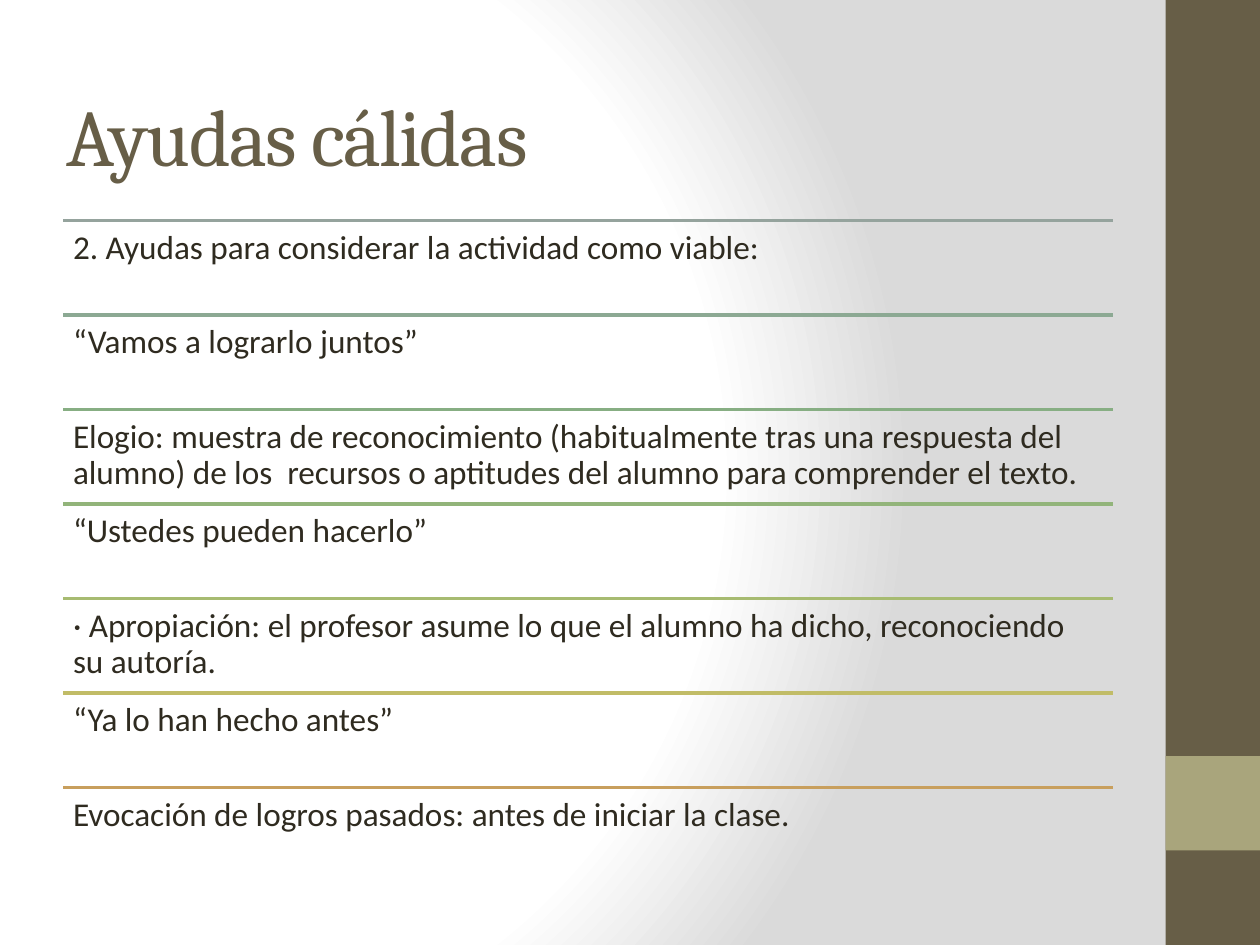
from pptx import Presentation
from pptx.dml.color import RGBColor
from pptx.enum.shapes import MSO_CONNECTOR, MSO_SHAPE
from pptx.enum.text import MSO_ANCHOR, MSO_AUTO_SIZE, PP_ALIGN
from pptx.oxml import parse_xml
from pptx.oxml.ns import nsdecls
from pptx.oxml.xmlchemy import OxmlElement
from pptx.util import Inches, Pt

COLORS = {
    "white": "FFFFFF",
    "grey": "DADADA",
    "brown": "675E47",
    "khaki": "A9A57C",
    "text": "2F2B20",
}
ROWS = [
    ("95A39D", "2. Ayudas para considerar la actividad como viable:"),
    ("8CA993", "“Vamos a lograrlo juntos”"),
    ("87AE83", "Elogio: muestra de reconocimiento (habitualmente tras una respuesta "
               "del alumno) de los  recursos o aptitudes del alumno para comprender "
               "el texto."),
    ("92B47A", "“Ustedes pueden hacerlo”"),
    ("A7BB71", "· Apropiación: el profesor asume lo que el alumno ha dicho, "
               "reconociendo su autoría."),
    ("C1BC67", "“Ya lo han hecho antes”"),
    ("C89F5D", "Evocación de logros pasados: antes de iniciar la clase."),
]
ROW_LEFT, ROW_TOP, ROW_WIDTH, ROW_HEIGHT = 0.5, 1.75, 8.33, 0.75
ROW_INSET = 0.08


def set_attributes(target, values):
    for name, value in values.items():
        setattr(target, name, value)


class SlideBuilder:
    title_font = {"name": "Cambria", "size": Pt(46)}
    body_font = {"name": "Calibri", "size": Pt(19)}
    title_frame = {
        "vertical_anchor": MSO_ANCHOR.MIDDLE,
        "word_wrap": True,
        "auto_size": MSO_AUTO_SIZE.NONE,
    }
    body_frame = {
        "vertical_anchor": MSO_ANCHOR.TOP,
        "word_wrap": True,
        **{f"margin_{side}": Inches(ROW_INSET)
           for side in ("left", "top", "right", "bottom")},
    }
    body_paragraph = {"line_spacing": 0.9, "space_after": Pt(6.65)}

    def __init__(self, slide):
        self.slide = slide

    def background(self):
        """Fill the background with a circular gradient centred on the left."""
        stops = [(0, "white"), (75, "white"), (100, "grey")]
        stop_xml = "".join(
            f'<a:gs pos="{position * 1000}"><a:srgbClr val="{COLORS[color]}"/></a:gs>'
            for position, color in stops
        )
        gradient = parse_xml(
            f'<a:gradFill {nsdecls("a")} rotWithShape="1"><a:gsLst>{stop_xml}</a:gsLst>'
            '<a:path path="circle"><a:fillToRect l="20000" t="50000" r="100000" '
            'b="50000"/></a:path></a:gradFill>'
        )
        self.slide.background.fill.gradient()
        default = self.slide.element.xpath(".//p:bgPr/a:gradFill")[0]
        default.getparent().replace(default, gradient)

    def rectangle(self, left, top, width, height, color):
        shape = self.slide.shapes.add_shape(
            MSO_SHAPE.RECTANGLE, *map(Inches, (left, top, width, height)))
        shape.shadow.inherit = False
        shape.fill.solid()
        shape.fill.fore_color.rgb = RGBColor.from_string(COLORS[color])
        shape.line.fill.background()

    def add_text(self, text_frame, text, font, color):
        paragraph = text_frame.paragraphs[0]
        paragraph.alignment = PP_ALIGN.LEFT
        run = paragraph.add_run()
        run.text = text
        set_attributes(run.font, font)
        run.font.color.rgb = RGBColor.from_string(COLORS[color])
        return paragraph, run

    def title(self, text, left, top, width, height):
        title = self.slide.shapes.title
        set_attributes(title, {
            "left": Inches(left), "top": Inches(top),
            "width": Inches(width), "height": Inches(height),
        })
        set_attributes(title.text_frame, self.title_frame)
        _, run = self.add_text(title.text_frame, text, self.title_font, "brown")
        run._r.get_or_add_rPr().set("spc", "-100")

    def rule(self, left, top, width, color):
        connector = self.slide.shapes.add_connector(
            MSO_CONNECTOR.STRAIGHT,
            *map(Inches, (left, top, left + width, top)))
        connector.line.color.rgb = RGBColor.from_string(color)
        connector.line.width = Pt(2)
        connector._element.spPr.append(OxmlElement("a:effectLst"))

    def text_box(self, text, left, top, width, height):
        box = self.slide.shapes.add_textbox(
            *map(Inches, (left, top, width, height)))
        set_attributes(box.text_frame, self.body_frame)
        paragraph, _ = self.add_text(box.text_frame, text, self.body_font, "text")
        set_attributes(paragraph, self.body_paragraph)


def main():
    presentation = Presentation()
    presentation.slide_width = Inches(10)
    presentation.slide_height = Inches(7.5)
    slide = presentation.slides.add_slide(presentation.slide_layouts[5])

    builder = SlideBuilder(slide)
    builder.background()
    builder.rectangle(9.25, 0, 0.75, 7.5, "brown")
    builder.rectangle(9.25, 6, 0.75, 0.75, "khaki")
    builder.title("Ayudas cálidas", 0.43, 0.44, 8.33, 1.25)
    for index, (color, text) in enumerate(ROWS):
        top = ROW_TOP + index * ROW_HEIGHT
        builder.rule(ROW_LEFT, top, ROW_WIDTH, color)
        builder.text_box(text, ROW_LEFT, top, ROW_WIDTH, ROW_HEIGHT)

    presentation.save("out.pptx")


if __name__ == "__main__":
    main()
